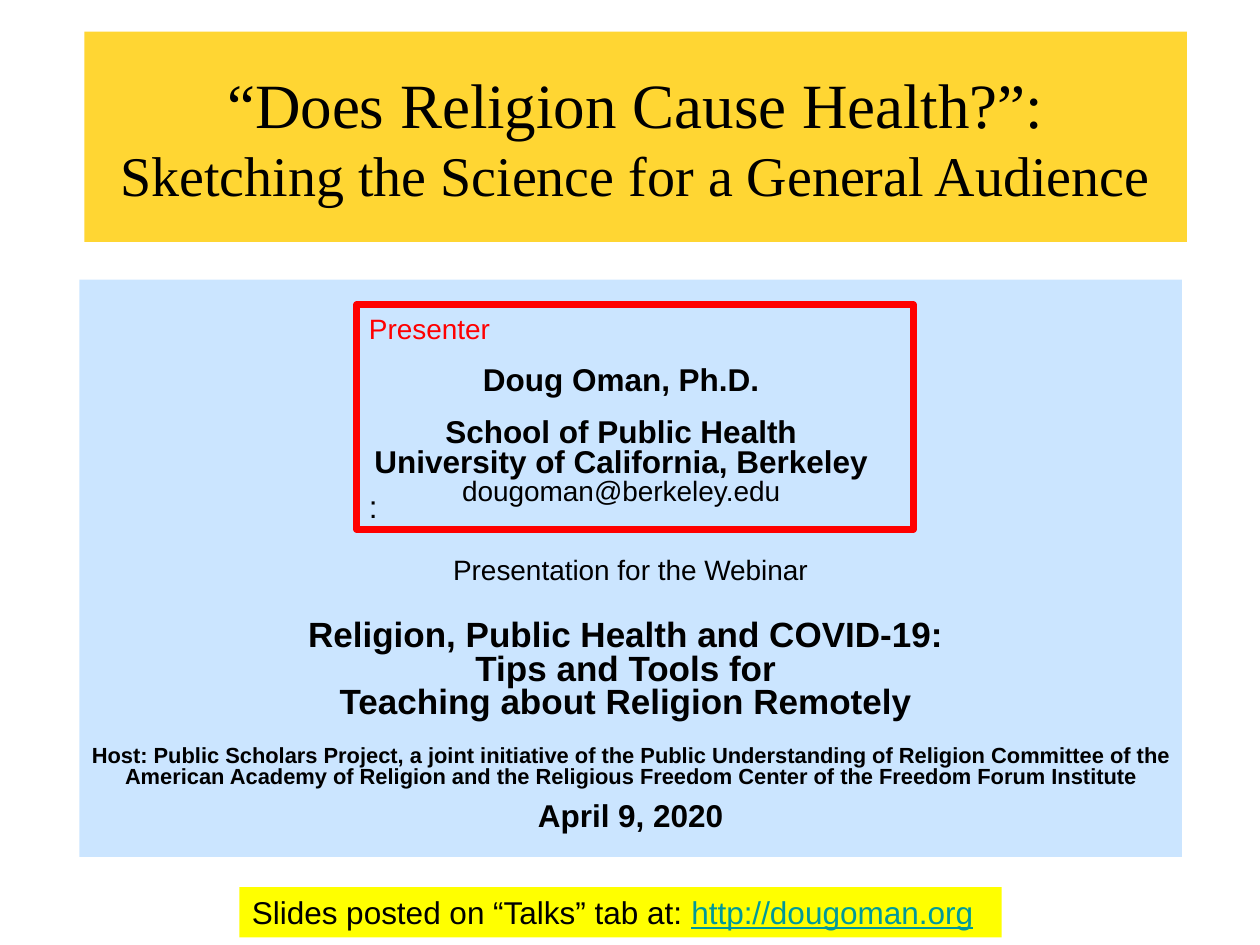
from dataclasses import dataclass
from typing import Optional

from lxml.etree import SubElement
from pptx import Presentation
from pptx.dml.color import RGBColor
from pptx.enum.shapes import MSO_SHAPE
from pptx.enum.text import MSO_ANCHOR, MSO_AUTO_SIZE, PP_ALIGN
from pptx.oxml.ns import qn
from pptx.util import Inches, Pt

COLORS = {
    "gold": "FFCC00",
    "sky": "99CCFF",
    "red": "FF0000",
    "yellow": "FFFF00",
    "black": "000000",
    "link": "009999",
}


@dataclass
class Span:
    text: str
    size: float
    bold: bool = False
    color: str = "black"
    underline: bool = False
    font: str = "Arial"


@dataclass
class Line:
    spans: list[Span]
    before: float = 0


@dataclass
class Panel:
    left: float
    top: float
    width: float
    height: float
    lines: list[Line]
    fill: Optional[str] = None
    opacity: int = 100
    outline: Optional[str] = None
    align: PP_ALIGN = PP_ALIGN.LEFT
    spacing: float = 1.0
    inset_top: float = 0.05
    wrap: bool = True


def set_fill(shape, color: str, opacity: int) -> None:
    shape.fill.solid()
    shape.fill.fore_color.rgb = RGBColor.from_string(COLORS[color])
    if opacity < 100:
        value = shape.fill._xPr.find(qn("a:solidFill"))[0]
        SubElement(value, qn("a:alpha"), val=str(opacity * 1000))


def add_span(paragraph, span: Span) -> None:
    run = paragraph.add_run()
    run.text = span.text
    font = run.font
    font.name, font.size, font.bold = span.font, Pt(span.size), span.bold
    font.underline = span.underline
    font.color.rgb = RGBColor.from_string(COLORS[span.color])


def write_lines(frame, panel: Panel) -> None:
    frame.word_wrap = panel.wrap
    frame.auto_size = MSO_AUTO_SIZE.NONE
    frame.vertical_anchor = MSO_ANCHOR.TOP
    frame.margin_top = Inches(panel.inset_top)
    for index, line in enumerate(panel.lines):
        paragraph = frame.add_paragraph() if index else frame.paragraphs[0]
        paragraph.alignment = panel.align
        paragraph.line_spacing = panel.spacing
        if line.before:
            paragraph.space_before = Pt(line.before)
        for span in line.spans:
            add_span(paragraph, span)


def draw_panel(slide, panel: Panel) -> None:
    place = [Inches(v) for v in (panel.left, panel.top, panel.width, panel.height)]
    if panel.fill or panel.outline:
        shape = slide.shapes.add_shape(MSO_SHAPE.RECTANGLE, *place)
        shape.shadow.inherit = False
        if panel.fill:
            set_fill(shape, panel.fill, panel.opacity)
        else:
            shape.fill.background()
        if panel.outline:
            shape.line.color.rgb = RGBColor.from_string(COLORS[panel.outline])
            shape.line.width = Pt(4)
        else:
            shape.line.fill.background()
    else:
        shape = slide.shapes.add_textbox(*place)
    write_lines(shape.text_frame, panel)


def draw_title(slide) -> None:
    title = slide.shapes.title
    title.left, title.top = Inches(0.67), Inches(0.25)
    title.width, title.height = Inches(8.75), Inches(1.67)
    set_fill(title, "gold", 80)
    frame = title.text_frame
    frame.auto_size = MSO_AUTO_SIZE.NONE
    frame.vertical_anchor = MSO_ANCHOR.MIDDLE
    heading = frame.paragraphs[0]
    heading.alignment = PP_ALIGN.CENTER
    add_span(heading, Span("“Does Religion Cause Health?”:", 36, font="Times New Roman"))
    heading.add_line_break()
    add_span(heading, Span("Sketching the Science for a General Audience", 32,
                           font="Times New Roman"))


WEBINAR = Panel(
    0.63, 2.22, 8.75, 4.58, fill="sky", opacity=50,
    align=PP_ALIGN.CENTER, spacing=0.8, inset_top=2.22,
    lines=[
        Line([Span("Presentation for the Webinar", 16)]),
        Line([Span("Religion, Public Health and COVID-19: ", 20, True)], 19.7),
        Line([Span("Tips and Tools for ", 20, True)]),
        Line([Span("Teaching about Religion Remotely ", 20, True)]),
        Line([Span("Host: Public Scholars Project, a joint initiative of the Public "
                   "Understanding of Religion Committee of the American Academy of "
                   "Religion and the Religious Freedom Center of the Freedom Forum "
                   "Institute", 12.5, True)], 14.3),
        Line([Span("April 9, 2020", 18, True)], 8.6),
    ])

PRESENTER = Panel(
    2.83, 2.42, 4.42, 1.78, outline="red",
    lines=[
        Line([Span("Presenter", 16, color="red")]),
        Line([Span(":", 18)], 81.5),
    ])

AFFILIATION = Panel(
    2.84, 2.87, 4.18, 1.53, align=PP_ALIGN.CENTER, spacing=0.8, wrap=False,
    lines=[
        Line([Span("Doug Oman, Ph.D.", 18, True)]),
        Line([Span("School of Public Health", 18, True)], 12),
        Line([Span("University of California, Berkeley", 18, True)]),
        Line([Span("dougoman@berkeley.edu", 16)]),
    ])

SLIDES_LINK = Panel(
    1.9, 7.04, 6.05, 0.4, fill="yellow", wrap=False,
    lines=[Line([
        Span("Slides posted on “Talks” tab at: ", 18),
        Span("http://dougoman.org", 18, color="link", underline=True),
        Span(" ", 18),
    ])])


def main() -> None:
    deck = Presentation()
    deck.slide_width, deck.slide_height = Inches(10), Inches(7.5)
    slide = deck.slides.add_slide(deck.slide_layouts[5])
    draw_title(slide)
    for panel in (WEBINAR, PRESENTER, AFFILIATION, SLIDES_LINK):
        draw_panel(slide, panel)
    deck.save("out.pptx")


if __name__ == "__main__":
    main()
